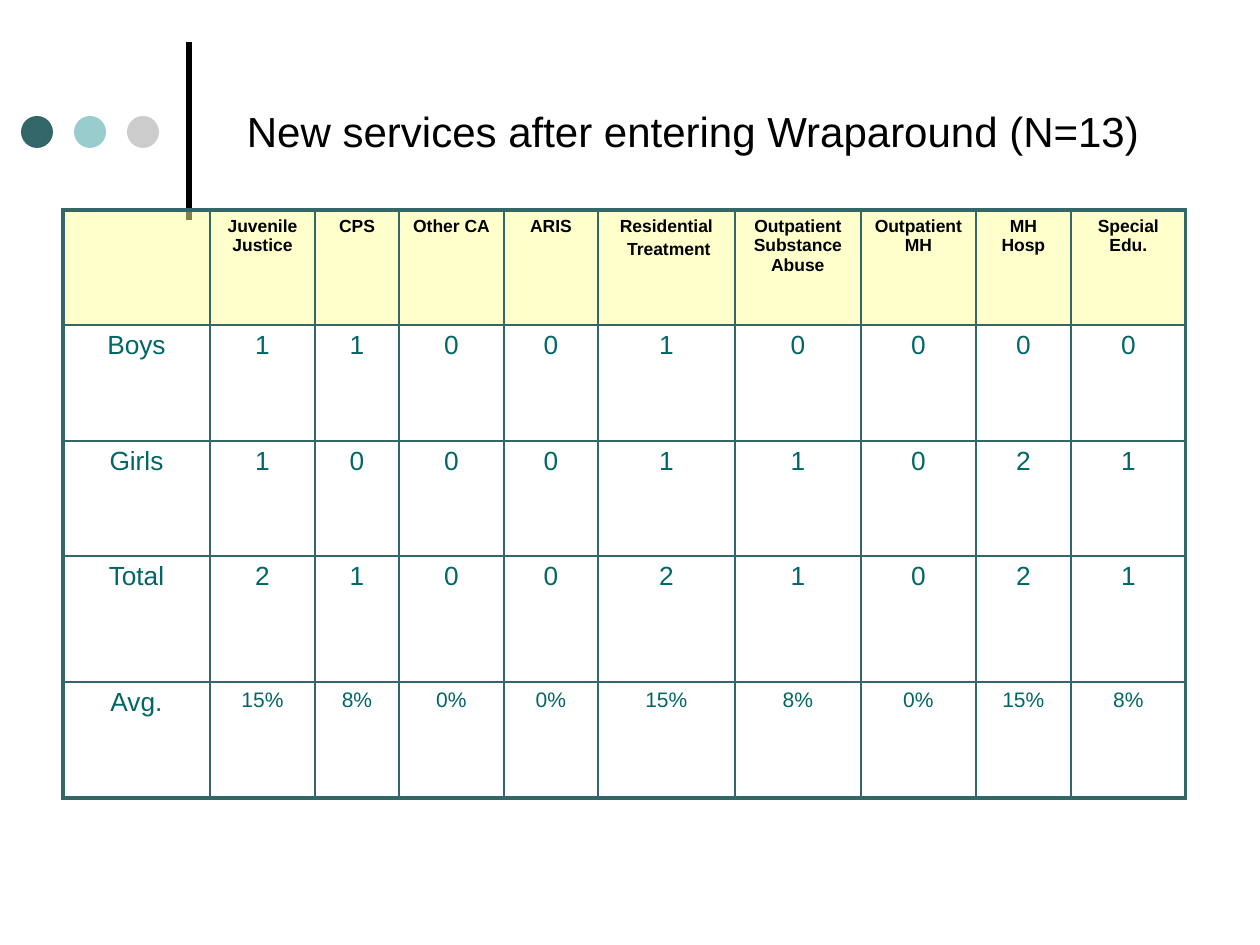
from lxml import etree
from pptx import Presentation
from pptx.dml.color import RGBColor
from pptx.enum.shapes import MSO_CONNECTOR, MSO_SHAPE
from pptx.enum.text import MSO_ANCHOR, PP_ALIGN
from pptx.oxml import parse_xml
from pptx.oxml.ns import nsdecls, qn
from pptx.util import Emu, Pt

LINE = MSO_CONNECTOR.STRAIGHT
DOT = MSO_SHAPE.OVAL
MID = MSO_ANCHOR.MIDDLE
CENTER = PP_ALIGN.CENTER
FONT = "Arial"
HUES = {"black": "000000", "teal": "336666", "aqua": "99CCCC",
        "gray": "CCCCCC", "cream": "FFFF99", "text": "006666"}
COLS = [147, 105, 84, 105, 94, 137, 126, 115, 95, 115]
ROWS = [115, 116, 115, 126, 116]
DATA = [
    ["", "Juvenile Justice", "CPS", "Other CA", "ARIS",
     "Residential\n Treatment", "Outpatient Substance Abuse",
     "Outpatient MH", "MH Hosp", "Special Edu."],
    ["Boys", "1", "1", "0", "0", "1", "0", "0", "0", "0"],
    ["Girls", "1", "0", "0", "0", "1", "1", "0", "2", "1"],
    ["Total", "2", "1", "0", "0", "2", "1", "0", "2", "1"],
    ["Avg.", "15%", "8%", "0%", "0%", "15%", "8%", "0%", "15%", "8%"],
]


def px(count):
    """Turn pixels at 126 to the inch into EMU."""
    return Emu(round(count * 914400 / 126))


def color(name):
    """Look up a named colour."""
    return RGBColor.from_string(HUES[name])


def style(para, size, hue, bold=False):
    """Centre a paragraph and format its runs."""
    para.alignment = CENTER
    for run in para.runs:
        font = run.font
        font.name, font.size, font.bold = FONT, Pt(size), bold
        font.color.rgb = color(hue)


def add_decor(slide, left, top, width, height):
    """Draw the three dots and the upright bar at the right of the box."""
    side = 32
    for i, hue in enumerate(("teal", "aqua", "gray")):
        dot = slide.shapes.add_shape(
            DOT, px(left + 53 * i), px(top + 74), px(side), px(side))
        dot.shadow.inherit = False
        dot.fill.solid()
        dot.fill.fore_color.rgb = color(hue)
        dot.line.fill.background()
    edge = px(left + width)
    bar = slide.shapes.add_connector(LINE, edge, px(top + height), edge, px(top))
    bar.line.color.rgb = color("black")
    bar.line.width = Pt(3)
    etree.SubElement(bar.line._get_or_add_ln().getparent(), qn("a:effectLst"))


def add_title(slide, left, top, width, height):
    """Place and format the title placeholder."""
    title = slide.shapes.title
    title.left, title.top = px(left), px(top)
    title.width, title.height = px(width), px(height)
    frame = title.text_frame
    frame.text = "New services after entering Wraparound (N=13)"
    frame.vertical_anchor = MID
    style(frame.paragraphs[0], 24, "black")


def add_edges(cell, outer):
    """Draw the four borders of a cell, heavier on the outer sides."""
    props = cell._tc.get_or_add_tcPr()
    for side in "LRTB":
        width = Pt(2.25 if side in outer else 1)
        props.append(parse_xml(
            f'<a:ln{side} {nsdecls("a")} w="{width}"><a:solidFill>'
            f'<a:srgbClr val="{HUES["teal"]}"/></a:solidFill></a:ln{side}>'))


def fill_cell(cell, text, row, col):
    """Write and format one cell by its place in the grid."""
    head = row == 0
    last = len(ROWS) - 1
    size = 10 if head else 12 if row == last and col else 15
    cell.text_frame.text = text
    for para in cell.text_frame.paragraphs:
        style(para, size, "black" if head else "text", head)
        para.space_before = Pt(size * 0.2)
    sides = {"L": col == 0, "R": col == len(COLS) - 1,
             "T": head, "B": row == last}
    add_edges(cell, [side for side, on in sides.items() if on])
    if head:
        cell.fill.solid()
        cell.fill.fore_color.rgb = color("cream")
        tint = cell._tc.tcPr.find(qn("a:solidFill"))[0]
        etree.SubElement(tint, qn("a:alpha"), val="50000")
    else:
        cell.fill.background()


def add_grid(slide, left, top):
    """Build the table of services."""
    table = slide.shapes.add_table(
        len(ROWS), len(COLS), px(left), px(top),
        px(sum(COLS)), px(sum(ROWS))).table
    table.first_row = table.horz_banding = False
    for col, width in zip(table.columns, COLS):
        col.width = px(width)
    for row, height in zip(table.rows, ROWS):
        row.height = px(height)
    for r, line in enumerate(DATA):
        for c, text in enumerate(line):
            fill_cell(table.cell(r, c), text, r, c)


def main():
    """Build and save the slide."""
    deck = Presentation()
    deck.slide_width, deck.slide_height = px(1260), px(945)
    slide = deck.slides.add_slide(deck.slide_layouts[5])
    add_decor(slide, 21, 42, 168, 178)
    add_title(slide, 210, 26, 966, 210)
    add_grid(slide, 63, 210)
    deck.save("out.pptx")


if __name__ == "__main__":
    main()
